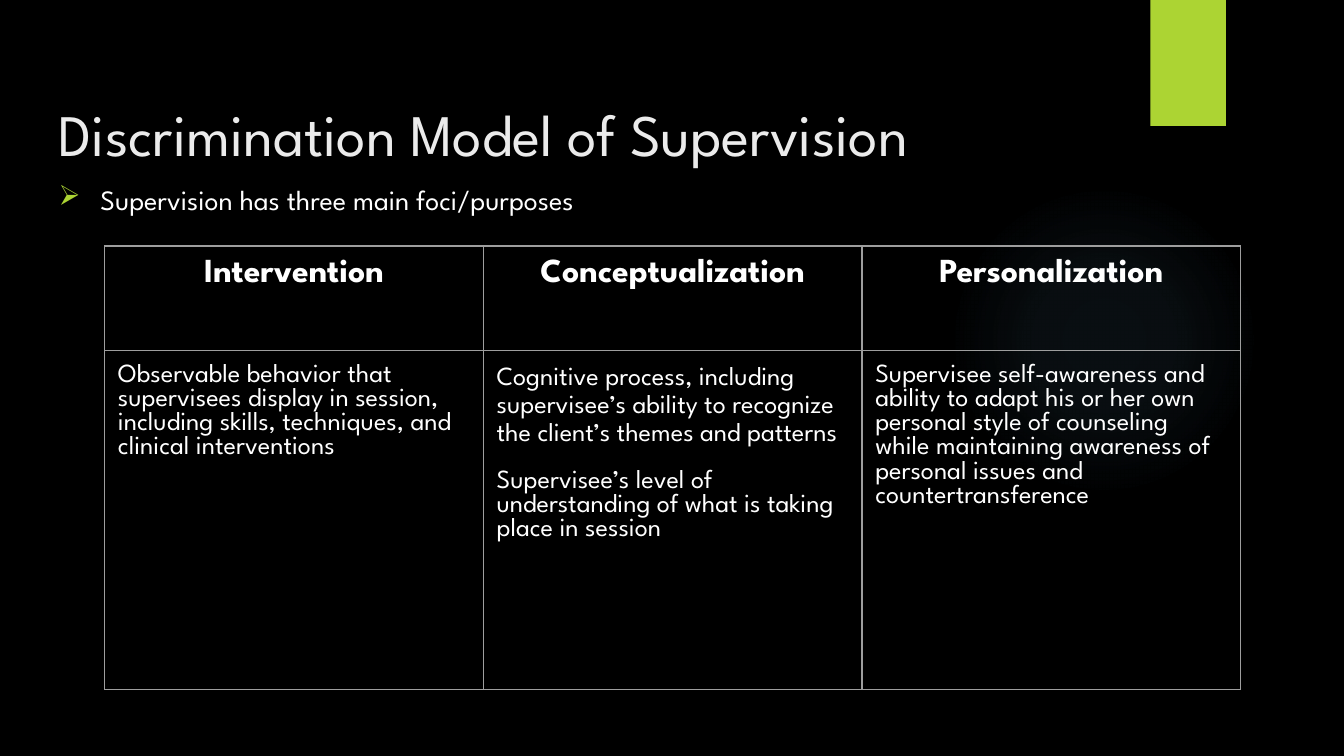
from pptx import Presentation
from pptx.dml.color import RGBColor
from pptx.enum.shapes import MSO_SHAPE
from pptx.enum.text import MSO_ANCHOR, PP_ALIGN
from pptx.oxml import parse_xml
from pptx.oxml.ns import nsdecls
from pptx.util import Cm, Pt

RECT, OVAL = MSO_SHAPE.RECTANGLE, MSO_SHAPE.OVAL
TOP, CENTER, LEFT = MSO_ANCHOR.TOP, PP_ALIGN.CENTER, PP_ALIGN.LEFT

BLACK = RGBColor(0x00, 0x00, 0x00)
WHITE = RGBColor(0xFF, 0xFF, 0xFF)
PALE = RGBColor(0xEB, 0xEB, 0xEB)
GREEN = RGBColor(0xAC, 0xD4, 0x33)
BLUE = RGBColor(0x7A, 0xC4, 0xF0)
GRAY = RGBColor(0x9E, 0x9E, 0x9E)

FACE = "League Spartan"
INSET = Cm(0.25)
TITLE = {"size": Pt(31.5), "name": FACE}
POINT = {"size": Pt(15), "name": FACE}
HEAD = {"size": Pt(18), "name": FACE, "bold": True}
BODY = {"size": Pt(14), "name": FACE, "bold": False}
MIDDLE = {"alignment": CENTER}
PLAIN = {"alignment": LEFT}
LOOSE = {"alignment": LEFT, "line_spacing": 1.15}
SPACED = {"alignment": LEFT, "space_before": Pt(12)}

HEADS = ["Intervention", "Conceptualization", "Personalization"]
NOTES = [
    [("Observable behavior that supervisees display in session, including "
      "skills, techniques, and clinical interventions", PLAIN)],
    [("Cognitive process, including supervisee’s ability to recognize the "
      "client’s themes and patterns", LOOSE),
     ("Supervisee’s level of understanding of what is taking place in "
      "session", SPACED)],
    [("Supervisee self-awareness and ability to adapt his or her own "
      "personal style of counseling while maintaining awareness of personal "
      "issues and countertransference", PLAIN)],
]


def apply(target, values):
    for name, value in values.items():
        setattr(target, name, value)


def write(para, text, font, color, layout=PLAIN):
    apply(para, layout)
    run = para.add_run()
    run.text = text
    apply(run.font, font)
    run.font.color.rgb = color


def add_shape(slide, kind, *box):
    shape = slide.shapes.add_shape(kind, *map(Cm, box))
    shape.shadow.inherit = False
    shape.line.fill.background()
    return shape


def add_glow(slide):
    glow = add_shape(slide, OVAL, 17.93, 3.5, 5.87, 5.87)
    glow.fill.background()
    stops = "".join(
        f'<a:gs pos="{pos * 1000}"><a:srgbClr val="{BLUE}">'
        f'<a:alpha val="{alpha * 1000}"/></a:srgbClr></a:gs>'
        for pos, alpha in [(0, 7), (36, 6), (69, 0)])
    fill = parse_xml(
        f'<a:gradFill {nsdecls("a")}><a:gsLst>{stops}</a:gsLst>'
        '<a:path path="circle"><a:fillToRect l="50000" t="50000" '
        'r="50000" b="50000"/></a:path></a:gradFill>')
    props = glow.element.spPr
    props.replace(props.find("{*}noFill"), fill)


def add_text(slide, box, top=INSET):
    frame = slide.shapes.add_textbox(*map(Cm, box)).text_frame
    apply(frame, {"word_wrap": True, "vertical_anchor": TOP,
                  "margin_left": INSET, "margin_right": INSET,
                  "margin_top": top, "margin_bottom": 0})
    return frame.paragraphs[0]


def add_bullet(para):
    props = para._p.get_or_add_pPr()
    props.set("marL", str(Cm(0.79)))
    props.set("indent", str(Cm(-0.79)))
    for part in (f'<a:buClr {nsdecls("a")}><a:srgbClr val="{GREEN}"/></a:buClr>',
                 f'<a:buChar {nsdecls("a")} char="➢"/>'):
        props.append(parse_xml(part))


def fill_cell(cell, items, font):
    for side in ("left", "right", "top", "bottom"):
        setattr(cell, f"margin_{side}", INSET)
    cell.vertical_anchor = TOP
    props = cell._tc.get_or_add_tcPr()
    for side in "LRTB":
        props.append(parse_xml(
            f'<a:ln{side} {nsdecls("a")} w="{Pt(0.75)}"><a:solidFill>'
            f'<a:srgbClr val="{GRAY}"/></a:solidFill></a:ln{side}>'))
    cell.fill.background()
    frame = cell.text_frame
    for i, (text, layout) in enumerate(items):
        para = frame.add_paragraph() if i else frame.paragraphs[0]
        write(para, text, font, WHITE, layout)


def add_grid(slide):
    box = map(Cm, (1.98, 4.65, 21.47, 8.39))
    table = slide.shapes.add_table(2, len(HEADS), *box).table
    apply(table, {"first_row": False, "horz_banding": False})
    for row, height in zip(table.rows, (1.98, 6.41)):
        row.height = Cm(height)
    for col, (head, notes) in enumerate(zip(HEADS, NOTES)):
        fill_cell(table.cell(0, col), [(head, MIDDLE)], HEAD)
        fill_cell(table.cell(1, col), notes, BODY)


def main():
    deck = Presentation()
    apply(deck, {"slide_width": Cm(25.4), "slide_height": Cm(14.29)})
    slide = deck.slides.add_slide(deck.slide_layouts[6])
    back = slide.background.fill
    back.solid()
    back.fore_color.rgb = BLACK

    add_glow(slide)
    tab = add_shape(slide, RECT, 21.74, 0, 1.43, 2.38)
    tab.fill.solid()
    tab.fill.fore_color.rgb = GREEN

    title = add_text(slide, (0.86, 1.24, 23.67, 1.6), Cm(0.6))
    write(title, "Discrimination Model of Supervision", TITLE, PALE)
    point = add_text(slide, (0.86, 3.2, 23.67, 9.5))
    add_bullet(point)
    write(point, "Supervision has three main foci/purposes", POINT, WHITE)
    add_grid(slide)
    deck.save("out.pptx")


if __name__ == "__main__":
    main()
